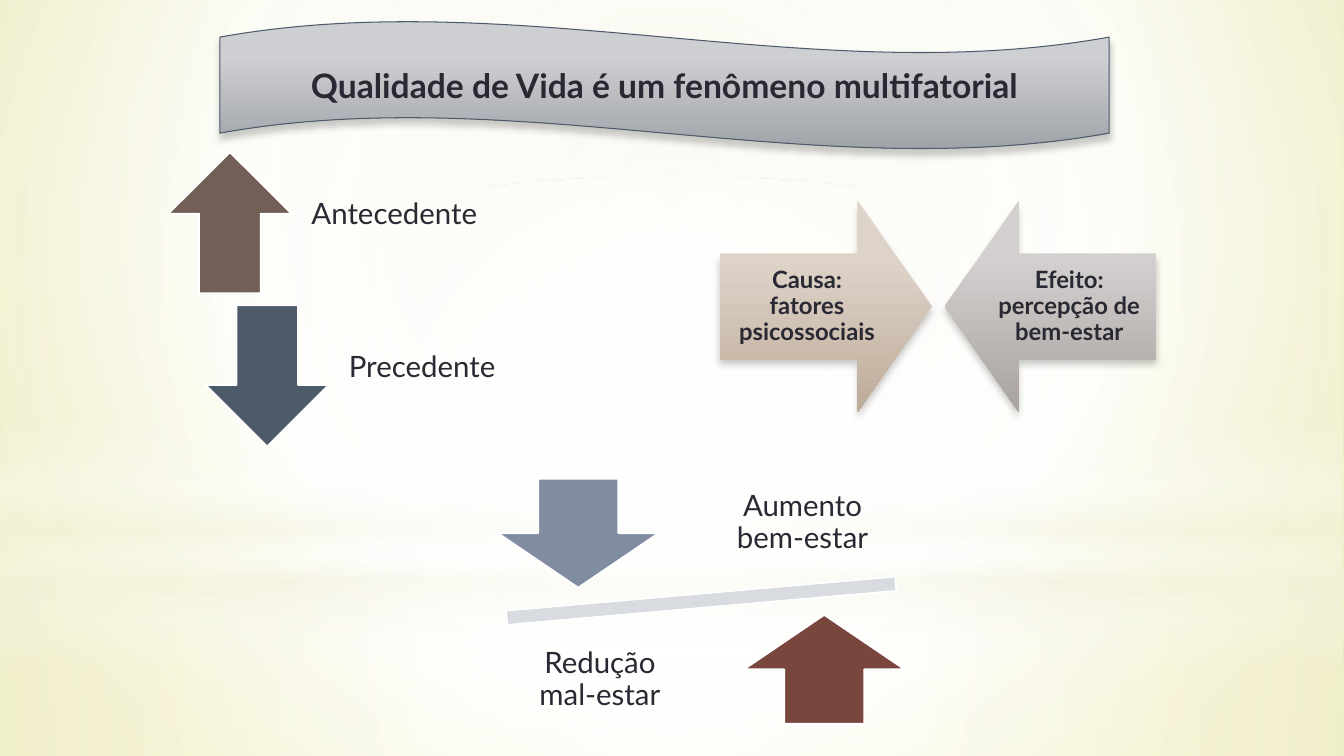
from lxml import etree
from pptx import Presentation
from pptx.dml.color import RGBColor
from pptx.enum.shapes import MSO_SHAPE as Shape
from pptx.enum.text import MSO_ANCHOR as Anchor, PP_ALIGN as Align
from pptx.oxml.ns import qn
from pptx.util import Inches, Pt

INK = RGBColor(0x29, 0x29, 0x34)
WHITE = RGBColor(0xFF, 0xFF, 0xFF)
BLACK = RGBColor(0x00, 0x00, 0x00)
CREAM = RGBColor(0xF3, 0xF2, 0xDC)
PALE_YELLOW = RGBColor(0xEF, 0xED, 0xCC)
YELLOW = RGBColor(0xE9, 0xE5, 0x8A)
BROWN = RGBColor(0x72, 0x60, 0x56)
SLATE = RGBColor(0x4C, 0x5A, 0x6A)
STEEL = RGBColor(0x80, 0x8D, 0xA0)
MIST = RGBColor(0xD8, 0xDB, 0xDF)
RUST = RGBColor(0x79, 0x46, 0x3D)
SILVER, GRAY = RGBColor(0xCD, 0xCF, 0xD2), RGBColor(0xA0, 0xA3, 0xA8)
SAND, TAN = RGBColor(0xDE, 0xD3, 0xC8), RGBColor(0xBD, 0xAB, 0x99)
ASH, STONE = RGBColor(0xD3, 0xCF, 0xCE), RGBColor(0xA9, 0xA3, 0xA0)

CENTER = (50, 50, 50, 50)
LABEL_INSETS = (0.16, 0, 0.16, 0.16)
SCALE_INSETS = (0.16, 0.16, 0.16, 0.16)
ARROW_INSETS = (0.13, 0.13, 0.13, 0.13)
TITLE_INSETS = (0.1, 0.05, 0.1, 0.05)


def add_color(parent, color, opacity=100):
    node = etree.SubElement(parent, qn("a:srgbClr"), val=str(color))
    if opacity < 100:
        etree.SubElement(node, qn("a:alpha"), val=str(opacity * 1000))


def set_gradient(owner, stops, focus=None):
    solid = owner.find(qn("a:solidFill"))
    gradient = etree.Element(qn("a:gradFill"), rotWithShape="1")
    stop_list = etree.SubElement(gradient, qn("a:gsLst"))
    for position, *color in stops:
        stop = etree.SubElement(stop_list, qn("a:gs"), pos=str(position * 1000))
        add_color(stop, *color)
    if focus:
        circle = etree.SubElement(gradient, qn("a:path"), path="circle")
        edges = {side: str(value * 1000) for side, value in zip("ltrb", focus)}
        etree.SubElement(circle, qn("a:fillToRect"), **edges)
    else:
        etree.SubElement(gradient, qn("a:lin"), ang="5400000", scaled="0")
    owner.replace(solid, gradient)


def add_figure(slide, kind, box, color=WHITE, line=None, line_width=1.25):
    shape = slide.shapes.add_shape(kind, *map(Inches, box))
    shape.shadow.inherit = False
    shape.fill.solid()
    shape.fill.fore_color.rgb = color
    if line is None:
        shape.line.fill.background()
    else:
        shape.line.color.rgb = line
        shape.line.width = Pt(line_width)
    return shape


def add_glow(slide, kind, box, stops, focus=None):
    shape = add_figure(slide, kind, box)
    set_gradient(shape.element.spPr, stops, focus)


def add_shaded(slide, kind, box, top, bottom, line=None):
    shape = add_figure(slide, kind, box, line=line, line_width=0.75)
    set_gradient(shape.element.spPr, [(28, top), (100, bottom)])
    effects = shape.element.spPr.find(qn("a:effectLst"))
    shadow = etree.SubElement(
        effects, qn("a:outerShdw"), blurRad=str(Pt(5)), dist=str(Pt(4)),
        dir="5400000", rotWithShape="0")
    add_color(shadow, BLACK, 20)
    return shape


def write_text(shape, lines, size, insets, bold=False, align=Align.CENTER, spacing=0.9):
    frame = shape.text_frame
    left, top, right, bottom = map(Inches, insets)
    frame_format = {
        "word_wrap": True, "vertical_anchor": Anchor.MIDDLE,
        "margin_left": left, "margin_top": top,
        "margin_right": right, "margin_bottom": bottom,
    }
    for name, value in frame_format.items():
        setattr(frame, name, value)
    paragraph = frame.paragraphs[0]
    paragraph.alignment = align
    paragraph.line_spacing = spacing
    for index, line in enumerate(lines):
        if index:
            paragraph.add_line_break()
        run = paragraph.add_run()
        run.text = line
        for name, value in {"name": "Lato", "size": Pt(size), "bold": bold}.items():
            setattr(run.font, name, value)
        run.font.color.rgb = INK


def add_label(slide, box, lines, size, insets, **text_format):
    label = slide.shapes.add_textbox(*map(Inches, box))
    write_text(label, lines, size, insets, **text_format)


def add_background(slide):
    slide.background.fill.solid()
    owner = slide.element.find(".//" + qn("p:bgPr"))
    set_gradient(owner, [(0, PALE_YELLOW), (60, WHITE), (100, YELLOW)], (20, 10, 20, 60))
    add_glow(slide, Shape.RECTANGLE, (0, 5.58, 13.33, 1.92),
             [(0, WHITE, 91), (37, WHITE, 76), (100, CREAM, 79)], CENTER)
    add_glow(slide, Shape.RECTANGLE, (0, 0, 13.33, 5.58),
             [(0, WHITE, 89), (48, WHITE, 62), (100, CREAM, 79)], CENTER)
    add_glow(slide, Shape.RECTANGLE, (0, 4.12, 13.33, 2.5),
             [(0, WHITE, 0), (29, WHITE, 30), (45, CREAM, 40),
              (55, WHITE, 26), (65, CREAM, 60), (100, WHITE, 0)])
    add_glow(slide, Shape.OVAL, (0, 1.75, 13.33, 5.58),
             [(0, WHITE), (56, WHITE, 0)], CENTER)


def add_order_arrows(slide):
    rows = [
        (Shape.UP_ARROW, 1.67, 1.51, BROWN, "Antecedente"),
        (Shape.DOWN_ARROW, 2.04, 3.03, SLATE, "Precedente"),
    ]
    for kind, left, top, color, word in rows:
        add_figure(slide, kind, (left, top, 1.22, 1.4), color, WHITE)
        add_label(slide, (left + 1.26, top, 2.07, 1.4), [word], 21,
                  LABEL_INSETS, align=Align.LEFT)


def add_title(slide):
    banner = add_shaded(slide, Shape.WAVE, (2.18, 0.21, 8.82, 1.27), SILVER, GRAY, SLATE)
    write_text(banner, ["Qualidade de Vida é um fenômeno multifatorial"], 24,
               TITLE_INSETS, bold=True, spacing=1.0)


def add_cause_and_effect(slide):
    arrows = [
        (Shape.RIGHT_ARROW, 7.14, 7.14, SAND, TAN,
         ["Causa:", "fatores", "psicossociais"]),
        (Shape.LEFT_ARROW, 9.37, 9.74, ASH, STONE,
         ["Efeito:", "percepção de", "bem-estar"]),
    ]
    for kind, left, text_left, top_color, bottom_color, lines in arrows:
        arrow = add_shaded(slide, kind, (left, 1.99, 2.1, 2.1), top_color, bottom_color)
        arrow.adjustments[1] = 0.35
        add_label(slide, (text_left, 2.52, 1.73, 1.05), lines, 17,
                  ARROW_INSETS, bold=True)


def add_balance(slide):
    beam = add_figure(slide, Shape.MATH_MINUS, (4.32, 5.66, 5.27, 0.6), MIST, WHITE)
    beam.rotation = 355
    sides = [
        (Shape.DOWN_ARROW, 4.94, 4.75, STEEL, 7.11, 4.62, ["Aumento", "bem-estar"]),
        (Shape.UP_ARROW, 7.38, 6.1, RUST, 5.1, 6.18, ["Redução", "mal-estar"]),
    ]
    for kind, left, top, color, text_left, text_top, lines in sides:
        add_figure(slide, kind, (left, top, 1.59, 1.08), color, WHITE)
        add_label(slide, (text_left, text_top, 1.7, 1.13), lines, 21, SCALE_INSETS)


def main():
    presentation = Presentation()
    presentation.slide_width = Inches(13.33)
    presentation.slide_height = Inches(7.5)
    slide = presentation.slides.add_slide(presentation.slide_layouts[6])
    add_background(slide)
    add_order_arrows(slide)
    add_title(slide)
    add_cause_and_effect(slide)
    add_balance(slide)
    presentation.save("out.pptx")


if __name__ == "__main__":
    main()
